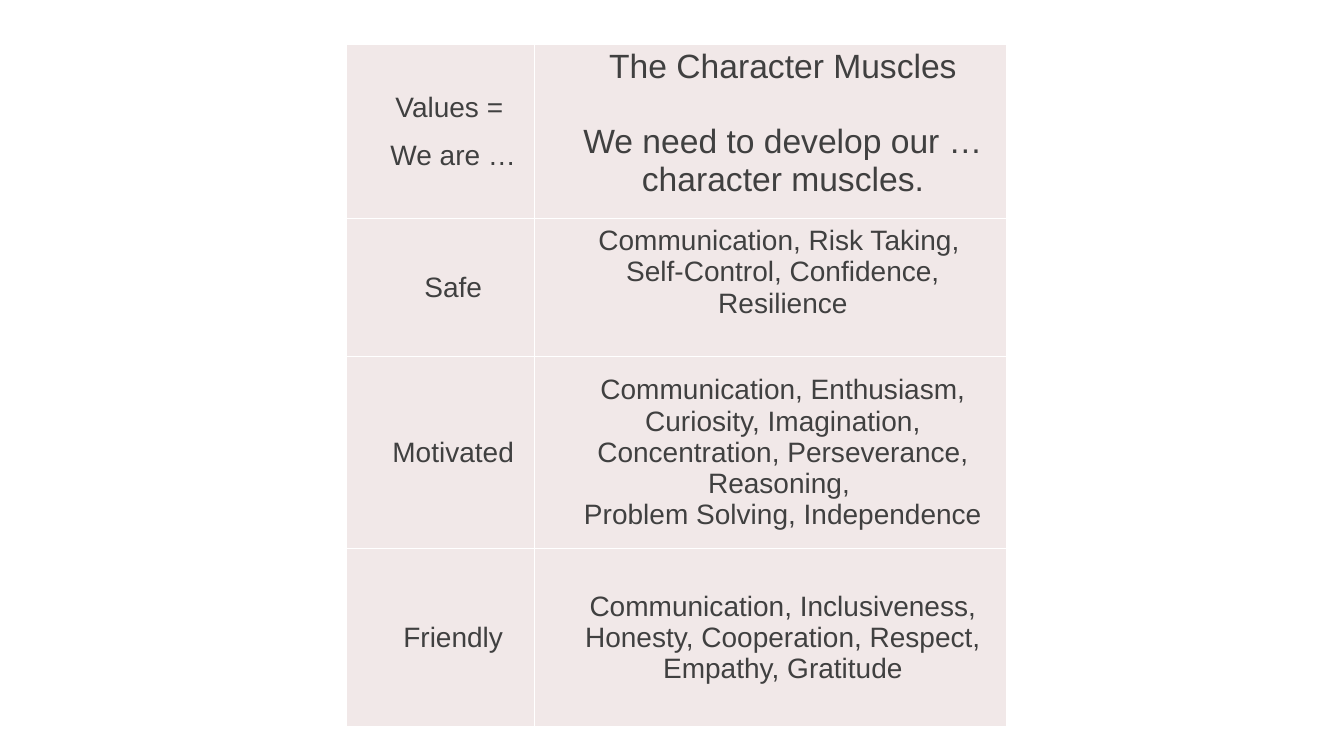
from pptx import Presentation
from pptx.dml.color import RGBColor
from pptx.enum.text import MSO_ANCHOR, PP_ALIGN
from pptx.oxml import parse_xml
from pptx.oxml.ns import nsdecls
from pptx.util import Inches, Pt

TEXT_COLOR = RGBColor(0x40, 0x40, 0x40)
CELL_FILL = RGBColor(0xF1, 0xE8, 0xE8)
BORDER_COLOR = RGBColor(0xFF, 0xFF, 0xFF)
FONT = "Arial"
BODY_SIZE, HEADING_SIZE = 20, 24

ROWS = [
    (["Values = ", "We are …"],
     ["The Character Muscles", "We need to develop our …character muscles."]),
    (["Safe"],
     ["Communication, Risk Taking, ", "Self-Control, Confidence, Resilience"]),
    (["Motivated"],
     ["Communication, Enthusiasm, Curiosity, Imagination, Concentration, "
      "Perseverance, Reasoning, ", "Problem Solving, Independence"]),
    (["Friendly"],
     ["Communication, Inclusiveness, Honesty, Cooperation, Respect, "
      "Empathy, Gratitude"]),
]
COLUMN_WIDTHS = [1.86, 4.68]
ROW_HEIGHTS = [1.73, 1.37, 1.9, 1.77]
LEFT, TOP = 3.44, 0.44
TEXT_INDENT = 0.25
PARAGRAPH_GAPS = {(0, 0): 12, (0, 1): 27}
BOTTOM_MARGINS = {(0, 1): 0.17, (1, 1): 0.31}


def add_borders(cell):
    properties = cell._tc.get_or_add_tcPr()
    for index, side in enumerate(("lnL", "lnR", "lnT", "lnB")):
        properties.insert(index, parse_xml(
            f'<a:{side} {nsdecls("a")} w="{Pt(1)}"><a:solidFill>'
            f'<a:srgbClr val="{BORDER_COLOR}"/></a:solidFill></a:{side}>'))


def fill_cell(cell, lines, size, gap, bottom):
    cell.fill.solid()
    cell.fill.fore_color.rgb = CELL_FILL
    add_borders(cell)
    cell.vertical_anchor = MSO_ANCHOR.MIDDLE
    cell.margin_left = cell.margin_right = Inches(0.05)
    cell.margin_top, cell.margin_bottom = 0, Inches(bottom)
    frame = cell.text_frame
    for index, line in enumerate(lines):
        paragraph = frame.add_paragraph() if index else frame.paragraphs[0]
        paragraph.alignment = PP_ALIGN.CENTER
        paragraph._p.get_or_add_pPr().set("marL", str(Inches(TEXT_INDENT)))
        if index and gap:
            paragraph.space_before = Pt(gap)
        run = paragraph.add_run()
        run.text = line
        run.font.name = FONT
        run.font.size = Pt(size)
        run.font.color.rgb = TEXT_COLOR


def main():
    presentation = Presentation()
    presentation.slide_width = Inches(13.33)
    presentation.slide_height = Inches(7.5)
    slide = presentation.slides.add_slide(presentation.slide_layouts[6])
    table = slide.shapes.add_table(
        len(ROWS), len(COLUMN_WIDTHS), Inches(LEFT), Inches(TOP),
        Inches(sum(COLUMN_WIDTHS)), Inches(sum(ROW_HEIGHTS))).table
    for column, width in zip(table.columns, COLUMN_WIDTHS):
        column.width = Inches(width)
    for row, height in zip(table.rows, ROW_HEIGHTS):
        row.height = Inches(height)
    table.first_row = table.horz_banding = False
    for row_index, row in enumerate(ROWS):
        for column_index, lines in enumerate(row):
            place = (row_index, column_index)
            size = HEADING_SIZE if place == (0, 1) else BODY_SIZE
            fill_cell(table.cell(*place), lines, size,
                      PARAGRAPH_GAPS.get(place, 0), BOTTOM_MARGINS.get(place, 0))
    presentation.save("out.pptx")


if __name__ == "__main__":
    main()
